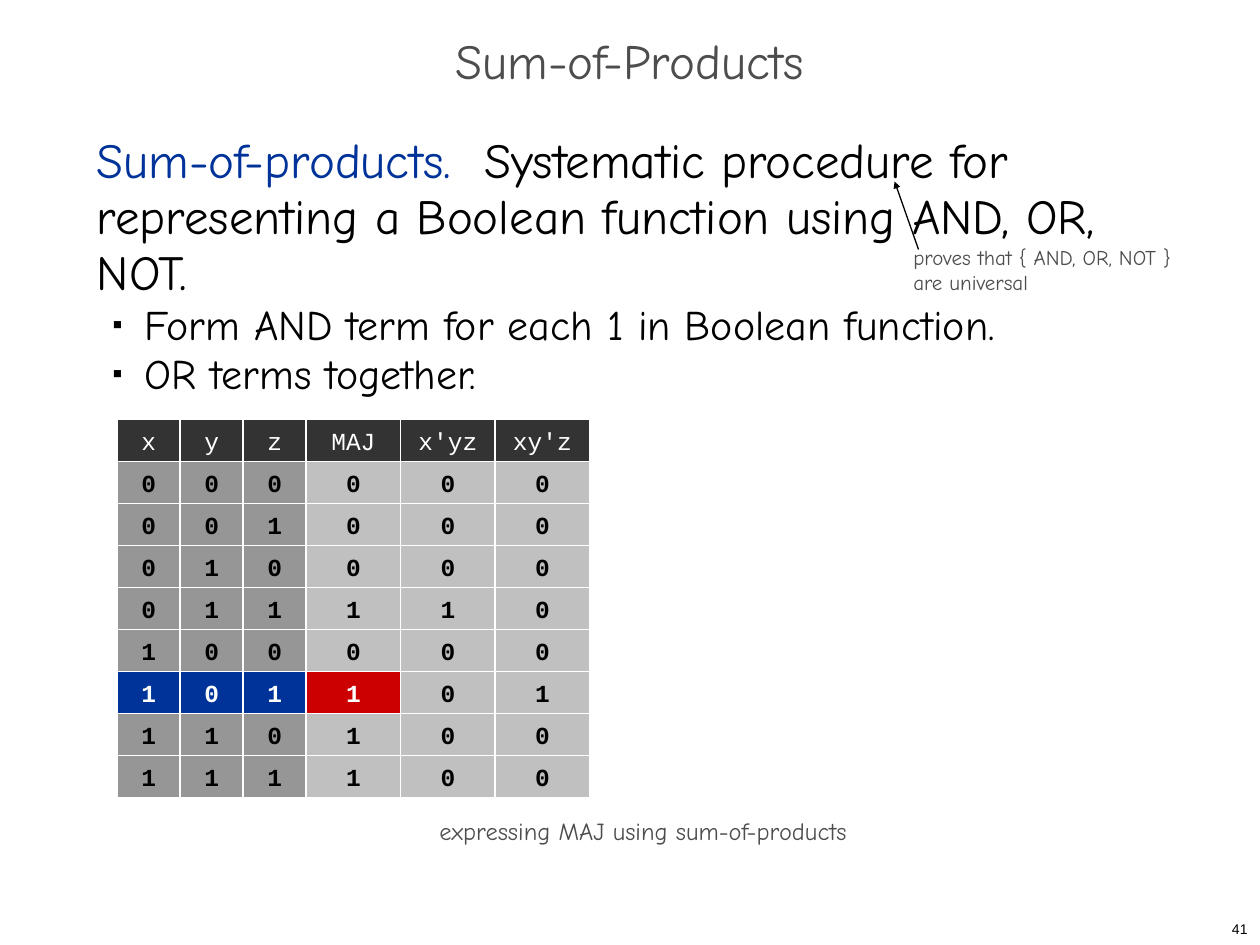
from itertools import accumulate
from lxml.etree import SubElement as Sub
from pptx import Presentation
from pptx.dml.color import RGBColor as RGB
from pptx.enum.shapes import MSO_CONNECTOR as Conn, MSO_SHAPE as Kind
from pptx.enum.text import MSO_ANCHOR as Anchor, MSO_AUTO_SIZE as Auto, PP_ALIGN as Align
from pptx.oxml.ns import qn
from pptx.util import Inches, Pt

# Content
TITLE = "Sum-of-Products"
LEAD = [
    ("Sum-of-products.  ", "blue"),
    ("Systematic procedure for representing a Boolean function using AND, OR, NOT.", "black"),
]
STEPS = ["Form AND term for each 1 in Boolean function.", "OR terms together."]
NOTE = "proves that { AND, OR, NOT }\vare universal"
CAPTION = "expressing MAJ using sum-of-products"
PAGE = "41"
HEADS = ["x", "y", "z", "MAJ", "x'yz", "xy'z"]
ROWS = ["000000", "001000", "010000", "011110",
        "100000", "101101", "110100", "111100"]
INPUTS = 3      # leading columns that hold the variables
FOCUS = "101"   # input row to highlight

THEME = {
    "font": "Comic Neue", "code": "Courier New", "plain": "Arial",
    "title": 28, "lead": 28, "step": 24, "note": 12, "cell": 14, "page": 8,
    "black": "000000", "white": "FFFFFF", "blue": "003399", "red": "CC0000",
    "gray": "4D4D4D", "head": "333333", "input": "969696", "output": "C0C0C0",
}

# Layout in inches
LEFT, TOP, ROW = 0.93, 3.33, 1 / 3
WIDTHS = [0.5] * INPUTS + [0.75] * (len(HEADS) - INPUTS)


def color(name):
    return RGB.from_string(THEME[name])


def style(para, size, tint=None, face="font", bold=False):
    font = para.font
    font.name, font.size, font.bold = THEME[face], Pt(THEME[size]), bold
    if tint:
        font.color.rgb = color(tint)


def put(frame, text, size, tint, align, face="font", wrap=False, bold=False):
    frame.word_wrap, frame.vertical_anchor = wrap, Anchor.MIDDLE
    para = frame.paragraphs[0]
    para.text, para.alignment = text, align
    style(para, size, tint, face, bold)


def add_line(shapes, spot, *words, **extra):
    frame = shapes.add_textbox(*map(Inches, spot)).text_frame
    put(frame, *words, **extra)
    return frame


def add_bullet(para):
    props = para._p.get_or_add_pPr()
    props.set("lvl", "1")
    props.set("marL", str(Inches(0.38)))
    props.set("indent", str(Inches(-0.25)))
    Sub(Sub(props, qn("a:buClr")), qn("a:srgbClr")).set("val", THEME["black"])
    Sub(props, qn("a:buSzPct")).set("val", "35000")
    Sub(props, qn("a:buFont")).set("typeface", THEME["plain"])
    Sub(props, qn("a:buChar")).set("char", "■")


def add_body(shapes):
    frame = shapes.add_textbox(*map(Inches, (0.67, 1, 8.58, 5.92))).text_frame
    frame.word_wrap = True
    para = frame.paragraphs[0]
    para.line_spacing = Pt(32)
    style(para, "lead")
    for text, tint in LEAD:
        run = para.add_run()
        run.text = text
        run.font.color.rgb = color(tint)
    for text in STEPS:
        para = frame.add_paragraph()
        para.text, para.line_spacing = text, Pt(28)
        style(para, "step", "black")
        add_bullet(para)


def add_note(shapes):
    group = shapes.add_group_shape().shapes
    frame = add_line(group, (7.15, 1.89, 2.56, 0.5), NOTE, "note", "gray", Align.LEFT)
    frame.auto_size = Auto.SHAPE_TO_FIT_TEXT
    arrow = group.add_connector(Conn.STRAIGHT, *map(Inches, (7.29, 1.98, 7.1, 1.44)))
    arrow.line.color.rgb, arrow.line.width = color("black"), Pt(0.75)
    tip = Sub(arrow.line._get_or_add_ln(), qn("a:tailEnd"))
    for key, value in (("type", "triangle"), ("w", "sm"), ("len", "sm")):
        tip.set(key, value)
    Sub(arrow._element.spPr, qn("a:effectLst"))


def look(row, col):
    """Fill and text colour of a cell; row 0 is the header."""
    if row == 0:
        return "head", "white"
    if ROWS[row - 1].startswith(FOCUS) and col <= INPUTS:
        return ("blue" if col < INPUTS else "red"), "white"
    return ("input" if col < INPUTS else "output"), "black"


def add_cell(shapes, spot, text, fill, tint, bold):
    cell = shapes.add_shape(Kind.RECTANGLE, *map(Inches, spot))
    cell.shadow.inherit = False
    cell.fill.solid()
    cell.fill.fore_color.rgb = color(fill)
    cell.line.color.rgb, cell.line.width = color("white"), Pt(0.75)
    put(cell.text_frame, text, "cell", tint, Align.CENTER, "code", bold=bold)


def add_grid(shapes):
    lefts = list(accumulate(WIDTHS, initial=LEFT))
    for r, values in enumerate([HEADS, *ROWS]):
        for c, text in enumerate(values):
            spot = lefts[c], TOP + r * ROW, WIDTHS[c], ROW
            add_cell(shapes, spot, text, *look(r, c), bold=r > 0)


def main():
    deck = Presentation()
    deck.slide_width, deck.slide_height = Inches(10), Inches(7.5)
    shapes = deck.slides.add_slide(deck.slide_layouts[6]).shapes

    # Page number and title
    add_line(shapes, (7.92, 7.25, 2.08, 0.25), PAGE, "page", "black", Align.RIGHT, "plain")
    title = add_line(shapes, (0, 0.17, 10, 0.72), TITLE, "title", "gray",
                     Align.CENTER, wrap=True)
    title.paragraphs[0].line_spacing = 0.7

    # Definition, remark, truth table and caption
    add_body(shapes)
    add_note(shapes)
    add_grid(shapes)
    add_line(shapes, (0.98, 6.38, 8.25, 0.42), CAPTION, "cell", "gray", Align.CENTER)
    deck.save("out.pptx")


if __name__ == "__main__":
    main()
